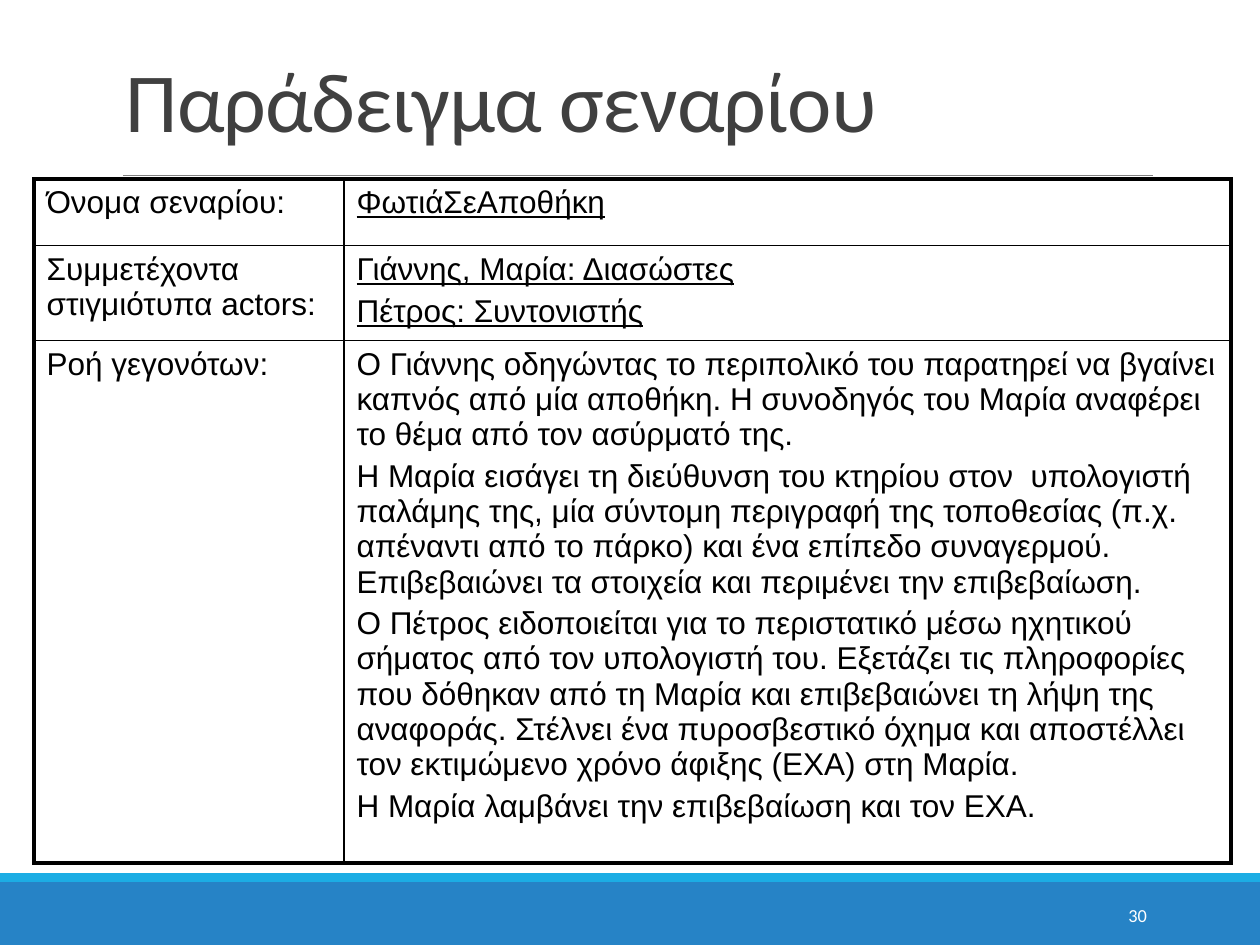
from pptx import Presentation
from pptx import util as u
from pptx.dml.color import RGBColor
from pptx.enum import shapes, text
from pptx.oxml import parse_xml
from pptx.oxml.ns import nsdecls

WIDE, HIGH = 10, 7.5
COLS = [2.46, 7.04]
ROWS = [0.53, 0.7, 3.89]
THIN, THICK = 1, 2.25

# Each row: label, underlined value, value paragraphs
STORY = [
    ("Όνομα σεναρίου:", True, ["ΦωτιάΣεΑποθήκη"]),
    ("Συμμετέχοντα στιγμιότυπα actors:", True,
     ["Γιάννης, Μαρία: Διασώστες", "Πέτρος: Συντονιστής"]),
    ("Ροή γεγονότων:", False, [
        "O Γιάννης οδηγώντας το περιπολικό του παρατηρεί να βγαίνει καπνός "
        "από μία αποθήκη. Η συνοδηγός του Μαρία αναφέρει το θέμα από τον "
        "ασύρματό της.",
        "Η Μαρία εισάγει τη διεύθυνση του κτηρίου στον  υπολογιστή παλάμης "
        "της, μία σύντομη περιγραφή της τοποθεσίας (π.χ. απέναντι από το "
        "πάρκο) και ένα επίπεδο συναγερμού. Επιβεβαιώνει τα στοιχεία και "
        "περιμένει την επιβεβαίωση.",
        "Ο Πέτρος ειδοποιείται για το περιστατικό μέσω ηχητικού σήματος από "
        "τον υπολογιστή του. Εξετάζει τις πληροφορίες που δόθηκαν από τη "
        "Μαρία και επιβεβαιώνει τη λήψη της αναφοράς. Στέλνει ένα "
        "πυροσβεστικό όχημα και αποστέλλει τον εκτιμώμενο χρόνο άφιξης (ΕΧΑ) "
        "στη Μαρία.",
        "Η Μαρία λαμβάνει την επιβεβαίωση και τον ΕΧΑ."]),
]


def paint(color, code):
    color.rgb = RGBColor.from_string(code)


def inches(*sizes):
    return [u.Inches(size) for size in sizes]


def style(para, face, size, code):
    para.font.name, para.font.size = face, u.Pt(size)
    paint(para.font.color, code)


def bar(slide, box, code):
    rect = slide.shapes.add_shape(shapes.MSO_SHAPE.RECTANGLE, *inches(*box))
    rect.shadow.inherit = False
    rect.fill.solid()
    paint(rect.fill.fore_color, code)
    rect.line.fill.background()


def label(slide, box, words, size, code, anchor):
    frame = slide.shapes.add_textbox(*inches(*box)).text_frame
    frame.word_wrap = True
    frame.vertical_anchor = anchor
    para = frame.paragraphs[0]
    para.text = words
    style(para, "Calibri", size, code)
    return para


def header(slide, box):
    left, top, width, height = box
    para = label(slide, box, "Παράδειγμα σεναρίου", 48, "404040",
                 text.MSO_ANCHOR.BOTTOM)
    para.line_spacing = 0.85
    para.runs[0].font._element.set("spc", "-50")
    y = top + height + 0.15
    rule = slide.shapes.add_connector(
        shapes.MSO_CONNECTOR.STRAIGHT,
        *inches(left + 0.08, y, left + width, y))
    paint(rule.line.color, "808080")
    rule.line.width = u.Pt(0.5)
    rule._element.spPr.append(parse_xml(f"<a:effectLst {nsdecls('a')}/>"))


def footer(slide, box):
    left, top, width, height = box
    bar(slide, box, "2683C6")
    bar(slide, (left, top - 0.07, width, 0.07), "1CADE4")
    para = label(slide, (left + 0.812 * width, top + 0.06, 1.08, 0.4),
                 "30", 10.5, "FFFFFF", text.MSO_ANCHOR.MIDDLE)
    para.alignment = text.PP_ALIGN.RIGHT


def border(cell, sides):
    """Draw black edges; sides are widths for left, right, top, bottom."""
    props = cell._tc.get_or_add_tcPr()
    for spot, (side, width) in enumerate(zip("LRTB", sides)):
        props.insert(spot, parse_xml(
            f'<a:ln{side} {nsdecls("a")} w="{u.Pt(width)}"><a:solidFill>'
            f'<a:srgbClr val="000000"/></a:solidFill></a:ln{side}>'))


def fill(cell, lines, under):
    cell.fill.background()
    cell.text = "\n".join(lines)
    for para in cell.text_frame.paragraphs:
        style(para, "Arial", 18, "000000")
        para.font.underline = under
        para.space_before = u.Pt(3.6)


def scenario(slide, left, top):
    box = inches(left, top, sum(COLS), sum(ROWS))
    table = slide.shapes.add_table(len(ROWS), len(COLS), *box).table
    table.first_row = table.horz_banding = False
    for col, width in zip(table.columns, COLS):
        col.width = u.Inches(width)
    for row, height in zip(table.rows, ROWS):
        row.height = u.Inches(height)
    for r, (name, under, lines) in enumerate(STORY):
        fill(table.cell(r, 0), [name], False)
        fill(table.cell(r, 1), lines, under)
        for c in range(len(COLS)):
            outer = (c == 0, c == len(COLS) - 1, r == 0, r == len(ROWS) - 1)
            border(table.cell(r, c), [THICK if o else THIN for o in outer])


def main():
    deck = Presentation()
    deck.slide_width, deck.slide_height = inches(WIDE, HIGH)
    slide = deck.slides.add_slide(deck.slide_layouts[6])
    footer(slide, (0, HIGH - 0.5, WIDE, 0.5))
    header(slide, (0.9, 0.31, 8.25, 0.93))
    scenario(slide, 0.27, 1.42)
    deck.save("out.pptx")


if __name__ == "__main__":
    main()
